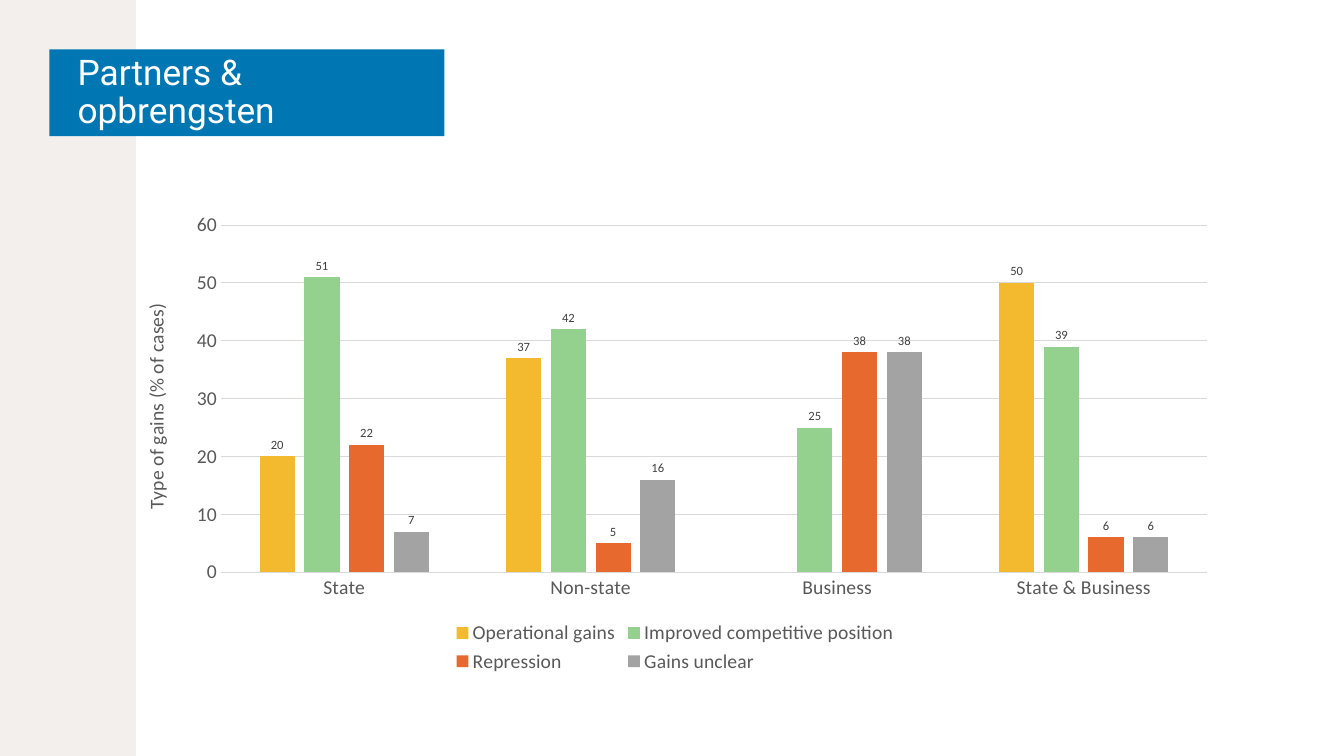
"""Build a slide with a clustered column chart of gains per type of partner."""
from dataclasses import dataclass

from pptx import Presentation
from pptx.chart.axis import ValueAxis
from pptx.chart.chart import Chart
from pptx.chart.data import CategoryChartData
from pptx.dml.color import RGBColor
from pptx.enum.chart import XL_CHART_TYPE as ChartType
from pptx.enum.chart import XL_LABEL_POSITION as LabelPosition
from pptx.enum.chart import XL_LEGEND_POSITION as LegendPosition
from pptx.enum.chart import XL_TICK_MARK as TickMark
from pptx.enum.shapes import MSO_SHAPE as Preset
from pptx.enum.text import MSO_ANCHOR as Anchor
from pptx.enum.text import MSO_AUTO_SIZE as AutoSize
from pptx.enum.text import PP_ALIGN as Align
from pptx.slide import Slide
from pptx.text.text import Font
from pptx.util import Inches, Pt

BLUE, WHITE, SAND = "0077B3", "FFFFFF", "F2EFED"
GREY, DARK, RULE = "595959", "404040", "D9D9D9"
CATEGORIES = ("State", "Non-state", "Business", "State & Business")


@dataclass(frozen=True)
class Gain:
    """One series of the chart."""

    name: str
    color: str
    values: tuple[int | None, ...]


GAINS = (
    Gain("Operational gains", "F3BA30", (20, 37, None, 50)),
    Gain("Improved competitive position", "94D18F", (51, 42, 25, 39)),
    Gain("Repression", "E8692D", (22, 5, 38, 6)),
    Gain("Gains unclear", "A3A3A3", (7, 16, 38, 6)),
)


def paint(target, color: str) -> None:
    """Give a fill, or the fill of a line, one solid colour."""
    target.solid()
    target.fore_color.rgb = RGBColor.from_string(color)


def style(font: Font, size: float, color: str, name: str = "Calibri") -> None:
    """Set the face, size and colour of a font."""
    font.name, font.size, font.bold = name, Pt(size), False
    paint(font.fill, color)


def add_band(page: Slide) -> None:
    """Draw the side band behind everything else."""
    band = page.shapes.add_shape(Preset.RECTANGLE, 0, 0, Inches(1.35), Inches(7.5))
    band.shadow.inherit = False
    paint(band.fill, SAND)
    band.line.fill.background()
    page.shapes.element.insert(2, band.element)


def set_title(page: Slide, text: str) -> None:
    """Place the title on its blue box."""
    title = page.shapes.title
    title.left, title.top = Inches(0.49), Inches(0.49)
    title.width, title.height = Inches(3.92), Inches(0.86)
    paint(title.fill, BLUE)
    frame = title.text_frame
    frame.text = text
    frame.word_wrap, frame.auto_size = True, AutoSize.NONE
    frame.vertical_anchor = Anchor.MIDDLE
    frame.margin_left, frame.margin_right = Inches(0.28), Inches(0.24)
    frame.margin_top = frame.margin_bottom = 0
    para = frame.paragraphs[0]
    para.alignment, para.line_spacing = Align.LEFT, 0.9
    style(para.font, 25.2, WHITE, "Roboto")


def format_value_axis(axis: ValueAxis) -> None:
    """Set the scale, gridlines and title of the value axis."""
    axis.minimum_scale, axis.maximum_scale, axis.major_unit = 0, 60, 10
    axis.tick_labels.number_format = "0"
    axis.tick_labels.number_format_is_linked = False
    axis.format.line.fill.background()
    grid = axis.major_gridlines.format.line
    grid.width = Pt(0.75)
    paint(grid.fill, RULE)
    frame = axis.axis_title.text_frame
    frame.text = "Type of gains (% of cases)"
    style(frame.paragraphs[0].font, 14, GREY)


def format_series(chart: Chart) -> None:
    """Colour the columns and label them with their values."""
    plot = chart.plots[0]
    plot.gap_width, plot.overlap, plot.vary_by_categories = 219, -27, False
    for series, gain in zip(plot.series, GAINS):
        paint(series.format.fill, gain.color)
        series.invert_if_negative = False
        labels = series.data_labels
        labels.show_value, labels.position = True, LabelPosition.OUTSIDE_END
        labels.number_format, labels.number_format_is_linked = "0", False
        style(labels.font, 9, DARK)


def add_gains_chart(page: Slide) -> None:
    """Add the column chart with its axes and legend."""
    data = CategoryChartData(number_format="0")
    data.categories = CATEGORIES
    for gain in GAINS:
        data.add_series(gain.name, gain.values)
    chart = page.shapes.add_chart(
        ChartType.COLUMN_CLUSTERED, Inches(1.2), Inches(2.02), Inches(11), Inches(4.7), data
    ).chart
    chart.has_title = False
    style(chart.font, 10, "000000")
    chart.has_legend = True
    chart.legend.position = LegendPosition.BOTTOM
    chart.legend.include_in_layout = False
    style(chart.legend.font, 14, GREY)
    for axis in (chart.category_axis, chart.value_axis):
        axis.major_tick_mark = axis.minor_tick_mark = TickMark.NONE
        style(axis.tick_labels.font, 14, GREY)
    line = chart.category_axis.format.line
    line.width = Pt(0.75)
    paint(line.fill, RULE)
    format_value_axis(chart.value_axis)
    format_series(chart)


def main() -> None:
    """Build the slide and save it."""
    deck = Presentation()
    deck.slide_width, deck.slide_height = Inches(13.34), Inches(7.5)
    page = deck.slides.add_slide(deck.slide_layouts.get_by_name("Title Only"))
    add_band(page)
    set_title(page, "Partners & opbrengsten")
    add_gains_chart(page)
    deck.save("out.pptx")


if __name__ == "__main__":
    main()
